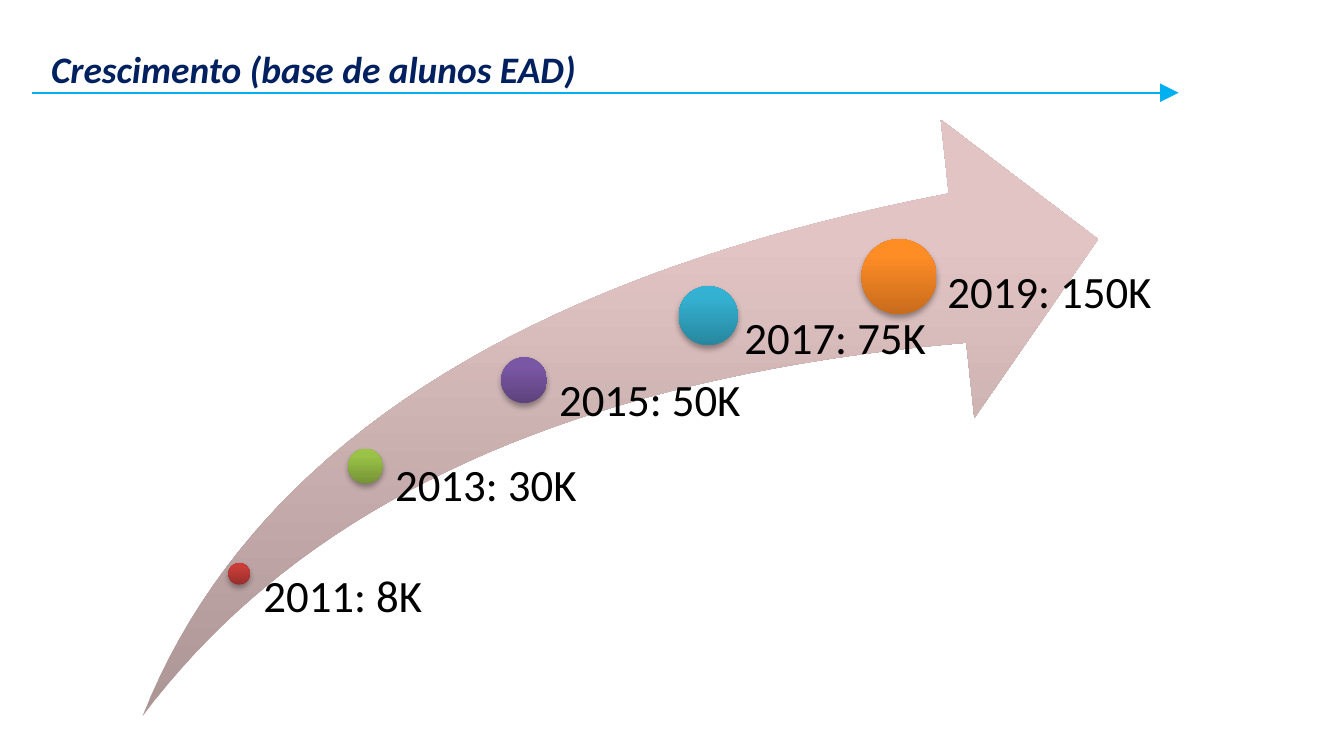
from copy import deepcopy
from dataclasses import dataclass

from lxml import etree
from pptx import Presentation
from pptx.dml.color import RGBColor
from pptx.enum.shapes import MSO_CONNECTOR, MSO_SHAPE
from pptx.enum.text import MSO_ANCHOR, MSO_AUTO_SIZE, PP_ALIGN
from pptx.oxml import parse_xml
from pptx.oxml.ns import nsdecls, qn
from pptx.util import Inches, Pt

LINE = MSO_CONNECTOR.STRAIGHT
OVAL = MSO_SHAPE.OVAL
TOP = MSO_ANCHOR.TOP
FIXED = MSO_AUTO_SIZE.NONE
LEFT = PP_ALIGN.LEFT
RIGHT = PP_ALIGN.RIGHT


@dataclass(frozen=True)
class Theme:
    font: str = "Calibri"
    head: int = 20
    body: int = 24
    navy: str = "002060"
    sky: str = "00B0F0"
    black: str = "000000"
    rose: tuple = ("AC9595", "E2C4C4", "E4C4C4")
    red: tuple = ("982D2B", "C83D39", "CC3A36")
    green: tuple = ("759336", "99C247", "9BC545")
    plum: tuple = ("5D427D", "7A57A5", "7A56A7")
    teal: tuple = ("27869E", "34B0D0", "30B3D4")
    gold: tuple = ("C86B1D", "FF8D25", "FF8D22")


def write(frame, text, *, font, size, color, bold=False, slant=False,
          align=LEFT, pad=(0, 0, 0, 0), space=1.0):
    frame.word_wrap = True
    frame.auto_size = FIXED
    frame.vertical_anchor = TOP
    (frame.margin_left, frame.margin_top,
     frame.margin_right, frame.margin_bottom) = map(Inches, pad)
    para = frame.paragraphs[0]
    para.alignment = align
    para.line_spacing = space
    run = para.add_run()
    run.text = text
    run.font.name = font
    run.font.size = Pt(size)
    run.font.bold = bold
    run.font.italic = slant
    run.font.color.rgb = RGBColor.from_string(color)


def curve(start, ctrl1, ctrl2, end, steps=40):
    points = []
    for i in range(1, steps + 1):
        t = i / steps
        u = 1 - t
        parts = (u ** 3, 3 * u * u * t, 3 * u * t * t, t ** 3)
        points.append(tuple(
            sum(k * p[axis] for k, p in zip(parts, (start, ctrl1, ctrl2, end)))
            for axis in (0, 1)))
    return points


class Board:
    def __init__(self, deck, theme):
        self.theme = theme
        self.slide = deck.slides.add_slide(deck.slide_layouts[5])
        self.shapes = self.slide.shapes

    def title(self, text, box):
        shape = self.shapes.title
        shape.left, shape.top, shape.width, shape.height = map(Inches, box)
        write(shape.text_frame, text, font=self.theme.font,
              size=self.theme.head, color=self.theme.navy, bold=True,
              slant=True, pad=(0.1, 0.05, 0.1, 0.05))

    def rule(self, start, end):
        line = self.shapes.add_connector(LINE, *map(Inches, start + end))
        line.line.color.rgb = RGBColor.from_string(self.theme.sky)
        line.line.width = Pt(1)
        edge = line.line._get_or_add_ln()
        etree.SubElement(edge, qn("a:tailEnd"), type="triangle", w="lg", len="lg")
        etree.SubElement(line._element.spPr, qn("a:effectLst"))

    def shade(self, shape, colors):
        shape.shadow.inherit = False
        shape.line.fill.background()
        shape.fill.gradient()
        shape.fill.gradient_angle = 90
        stops = shape._element.spPr.find(qn("a:gradFill")).find(qn("a:gsLst"))
        stops.append(deepcopy(stops[-1]))
        for stop, color, place in zip(shape.fill.gradient_stops, colors, (0, 0.8, 1)):
            stop.color.rgb = RGBColor.from_string(color)
            stop.position = place

    def swoosh(self):
        tip, neck, tail = (1.06, 5.33), (7.06, 1.44), (7.19, 2.55)
        points = curve(tip, (1.85, 3.36), (3.85, 2.06), neck)
        points += [(7, 0.89), (8.17, 1.78), (7.25, 3.11), tail]
        points += curve(tail, (4.29, 2.8), (2.25, 3.73), tip)
        path = self.shapes.build_freeform(*map(Inches, tip))
        path.add_line_segments([tuple(map(Inches, p)) for p in points], close=True)
        self.shade(path.convert_to_shape(), self.theme.rose)

    def dot(self, left, top, size, colors):
        shape = self.shapes.add_shape(OVAL, *map(Inches, (left, top, size, size)))
        self.shade(shape, colors)
        shape._element.spPr.find(qn("a:effectLst")).append(parse_xml(
            f'<a:outerShdw {nsdecls("a")} blurRad="{Pt(3.1)}" dist="{Pt(1.8)}" '
            f'dir="5400000" rotWithShape="0"><a:srgbClr val="{self.theme.black}">'
            '<a:alpha val="35000"/></a:srgbClr></a:outerShdw>'))

    def label(self, text, box, inset, align):
        shape = self.shapes.add_textbox(*map(Inches, box))
        write(shape.text_frame, text, font=self.theme.font,
              size=self.theme.body, color=self.theme.black, align=align,
              pad=(inset, 0, 0, 0), space=0.9)


def main():
    deck = Presentation()
    deck.slide_width = Inches(10)
    deck.slide_height = deck.slide_width * 9 // 16
    theme = Theme()
    board = Board(deck, theme)
    board.title("Crescimento (base de alunos EAD)", (0.28, 0.29, 8.68, 0.44))
    board.rule((0.24, 0.69), (8.77, 0.69))
    board.swoosh()
    marks = (
        ("2011: 8K", (1.7, 4.19, 0.16), theme.red, (1.87, 4.27, 2.26, 1.06), 0.09, LEFT),
        ("2013: 30K", (2.59, 3.34, 0.26), theme.green, (2.8, 3.44, 2.5, 1.86), 0.14, LEFT),
        ("2015: 50K", (3.73, 2.66, 0.34), theme.plum, (3.98, 2.81, 2.81, 2.5), 0.18, LEFT),
        ("2017: 75K", (5.05, 2.13, 0.44), theme.teal, (5.31, 2.35, 2.7, 2.98), 0.23, LEFT),
        ("2019: 150K", (6.41, 1.78, 0.56), theme.gold, (6.44, 2.01, 2.13, 3.27), 0.3, RIGHT),
    )
    for text, spot, colors, box, inset, align in marks:
        board.dot(*spot, colors)
        board.label(text, box, inset, align)
    deck.save("out.pptx")


if __name__ == "__main__":
    main()
